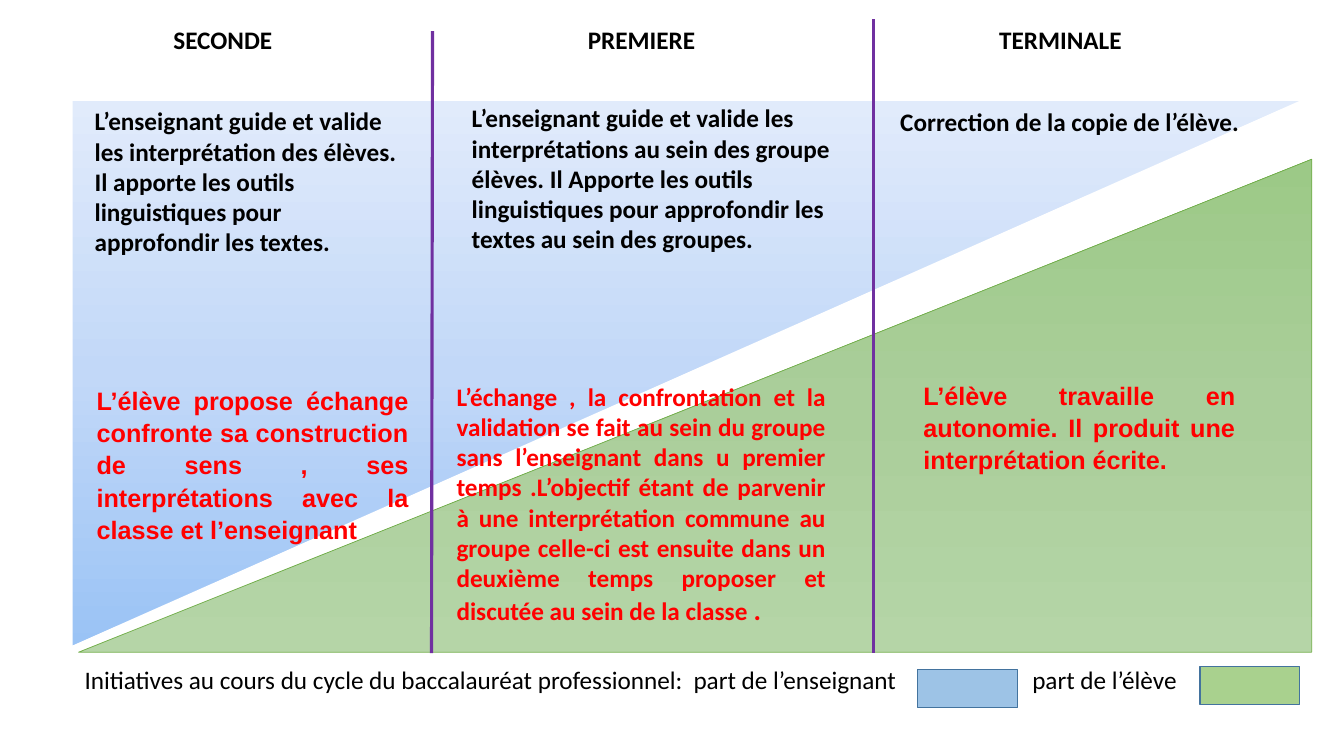
from copy import deepcopy

from lxml import etree
from pptx import Presentation
from pptx.dml.color import RGBColor
from pptx.enum.shapes import MSO_CONNECTOR, MSO_SHAPE
from pptx.enum.text import MSO_AUTO_SIZE, PP_ALIGN
from pptx.oxml.ns import qn
from pptx.util import Inches, Pt

RECTANGLE = MSO_SHAPE.RECTANGLE
TRIANGLE = MSO_SHAPE.RIGHT_TRIANGLE
STRAIGHT = MSO_CONNECTOR.STRAIGHT
JUSTIFY = PP_ALIGN.JUSTIFY
GROW = MSO_AUTO_SIZE.SHAPE_TO_FIT_TEXT

COLORS = {
    "black": "000000",
    "red": "FF0000",
    "white": "FFFFFF",
    "purple": "7030A0",
    "green_edge": "70AD47",
    "key_edge": "43739E",
    "teacher": "9DC3E6",
    "pupil": "A9D18E",
    "teacher_dark": "9AC3F5",
    "teacher_mid": "C2D8F8",
    "teacher_light": "E1EBFB",
    "pupil_light": "B5D5A7",
    "pupil_mid": "AACE9A",
    "pupil_dark": "9CC987",
}


def color(name):
    return RGBColor.from_string(COLORS[name])


def add_span(para, text, size=18, font="Calibri", ink="black", bold=True):
    span = para.add_run()
    span.text = text
    span.font.size = Pt(size)
    span.font.name = font
    span.font.bold = bold
    span.font.color.rgb = color(ink)


def add_text(page, place, *texts, align=None, spacing=None, after=None,
             indent=0.1, tabs=(), **style):
    box = page.shapes.add_textbox(*map(Inches, place))
    frame = box.text_frame
    frame.word_wrap = True
    frame.auto_size = GROW
    frame.margin_left = Inches(indent)
    for index, text in enumerate(texts):
        para = frame.add_paragraph() if index else frame.paragraphs[0]
        para.alignment = align
        para.line_spacing = spacing
        para.space_after = after
        if tabs:
            stops = etree.SubElement(para._p.get_or_add_pPr(), qn("a:tabLst"))
            for stop in tabs:
                etree.SubElement(stops, qn("a:tab"), pos=str(Inches(stop)), algn="l")
        add_span(para, text, **style)
    return box


def add_outlined(page, kind, place, edge, width):
    shape = page.shapes.add_shape(kind, *map(Inches, place))
    shape.shadow.inherit = False
    shape.line.color.rgb = color(edge)
    shape.line.width = Pt(width)
    return shape


def add_wedge(page, place, rotation, shades, angle, edge, width):
    wedge = add_outlined(page, TRIANGLE, place, edge, width)
    wedge.rotation = rotation
    wedge.fill.gradient()
    wedge.fill.gradient_angle = angle
    stop_list = wedge._element.spPr.find(".//" + qn("a:gsLst"))
    stop_list.append(deepcopy(stop_list[0]))
    for index, (stop, shade) in enumerate(zip(wedge.fill.gradient_stops, shades)):
        stop.position = index / 2
        stop.color.rgb = color(shade)


def add_key(page, place, fill):
    key = add_outlined(page, RECTANGLE, place, "key_edge", 1)
    key.fill.solid()
    key.fill.fore_color.rgb = color(fill)


def add_divider(page, *ends):
    divider = page.shapes.add_connector(STRAIGHT, *map(Inches, ends))
    divider.line.color.rgb = color("purple")
    divider.line.width = Pt(2.25)
    etree.SubElement(divider._element.spPr, qn("a:effectLst"))


def main():
    deck = Presentation()
    deck.slide_width = Inches(13.33)
    deck.slide_height = Inches(7.5)
    page = deck.slides.add_slide(deck.slide_layouts[6])

    for left, level in ((0.78, "SECONDE"), (4.89, "PREMIERE"), (8.97, "TERMINALE")):
        add_text(page, (left, 0.19, 3.21, 0.4), level, indent=0.94)

    add_wedge(page, (4.11, -2.41, 5.43, 12.23), 90,
              ("teacher_dark", "teacher_mid", "teacher_light"), 180, "white", 1.5)
    add_wedge(page, (4.45, -2.09, 4.89, 12.23), 270,
              ("pupil_light", "pupil_mid", "pupil_dark"), 0, "green_edge", 0.5)
    add_divider(page, 4.28, 6.48, 4.29, 0.31)
    add_divider(page, 8.66, 0.19, 8.66, 6.48)

    add_text(page, (0.84, 1, 3.29, 1.62),
             "L’enseignant guide et valide les interprétation des élèves.",
             "Il apporte les outils linguistiques pour approfondir les textes.")
    add_text(page, (4.58, 0.97, 3.89, 1.62),
             "L’enseignant guide et valide les interprétations au sein des groupe "
             "élèves. Il Apporte les outils linguistiques pour approfondir les "
             "textes au sein des groupes.")
    add_text(page, (8.83, 1.01, 3.89, 0.4), "Correction de la copie de l’élève.")

    pupil_style = {"align": JUSTIFY, "spacing": 1.07, "after": Pt(8),
                   "font": "Arial", "ink": "red"}
    add_text(page, (0.86, 3.75, 3.29, 1.72),
             "L’élève propose échange confronte sa construction de sens , ses "
             "interprétations avec la classe et l’enseignant", **pupil_style)
    exchange = add_text(
        page, (4.43, 3.73, 3.86, 2.56),
        "L’échange , la confrontation et la validation se fait au sein du groupe "
        "sans l’enseignant dans u premier temps .L’objectif étant de parvenir à "
        "une interprétation commune au groupe celle-ci est ensuite dans un "
        "deuxième temps proposer et discutée au sein de la classe ",
        align=JUSTIFY, ink="red")
    add_span(exchange.text_frame.paragraphs[0], ".", size=20, ink="red")
    add_text(page, (9.06, 3.7, 3.29, 1.07),
             "L’élève travaille en autonomie. Il produit une interprétation écrite.",
             **pupil_style)

    add_text(page, (0.74, 6.54, 12.23, 0.71),
             "Initiatives au cours du cycle du baccalauréat professionnel:"
             "\tpart de l’enseignant\tpart de l’élève",
             tabs=(6.04, 9.4), bold=False)
    add_key(page, (9.1, 6.64, 0.99, 0.38), "teacher")
    add_key(page, (11.9, 6.61, 0.99, 0.38), "pupil")

    deck.save("out.pptx")


if __name__ == "__main__":
    main()
